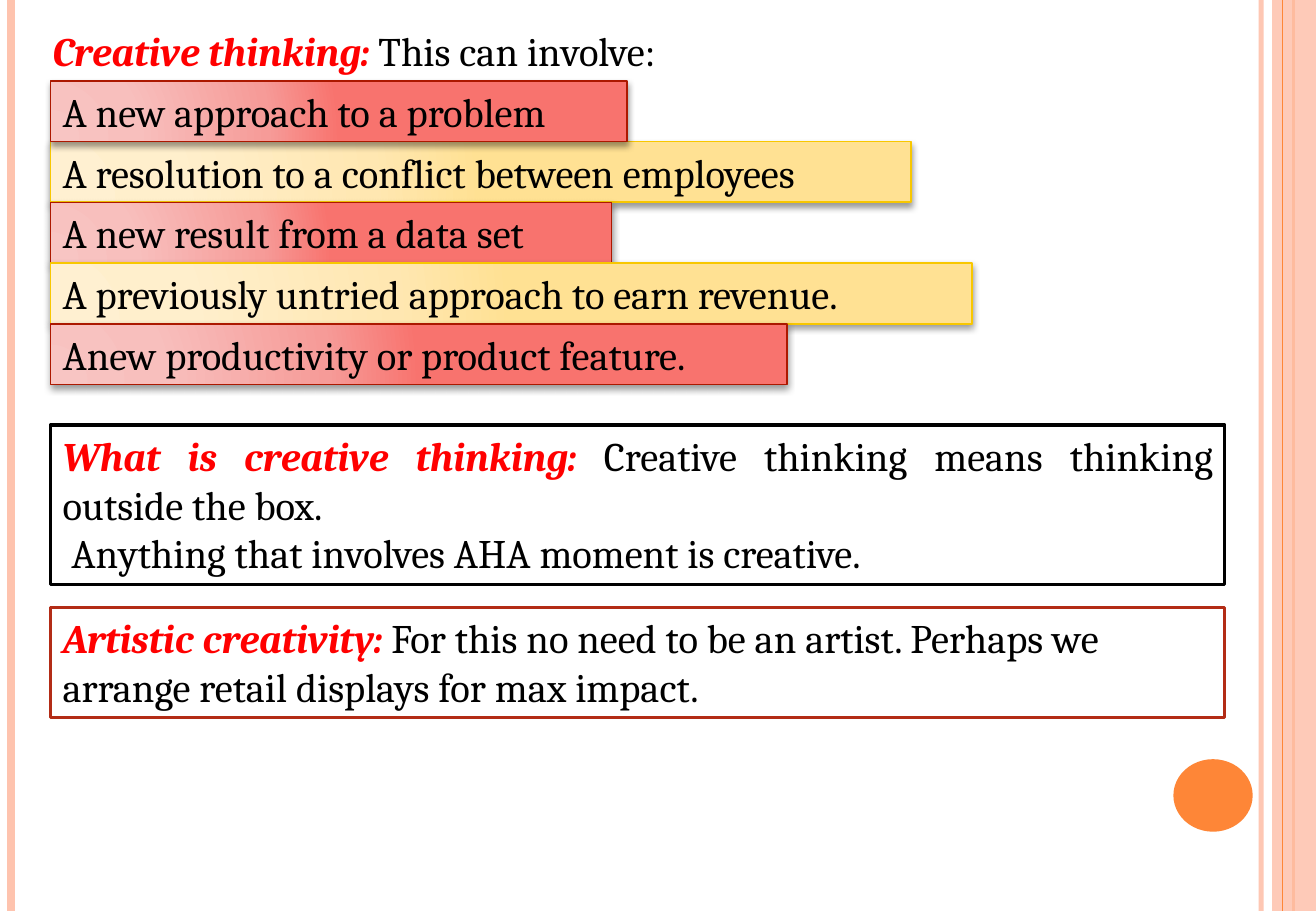
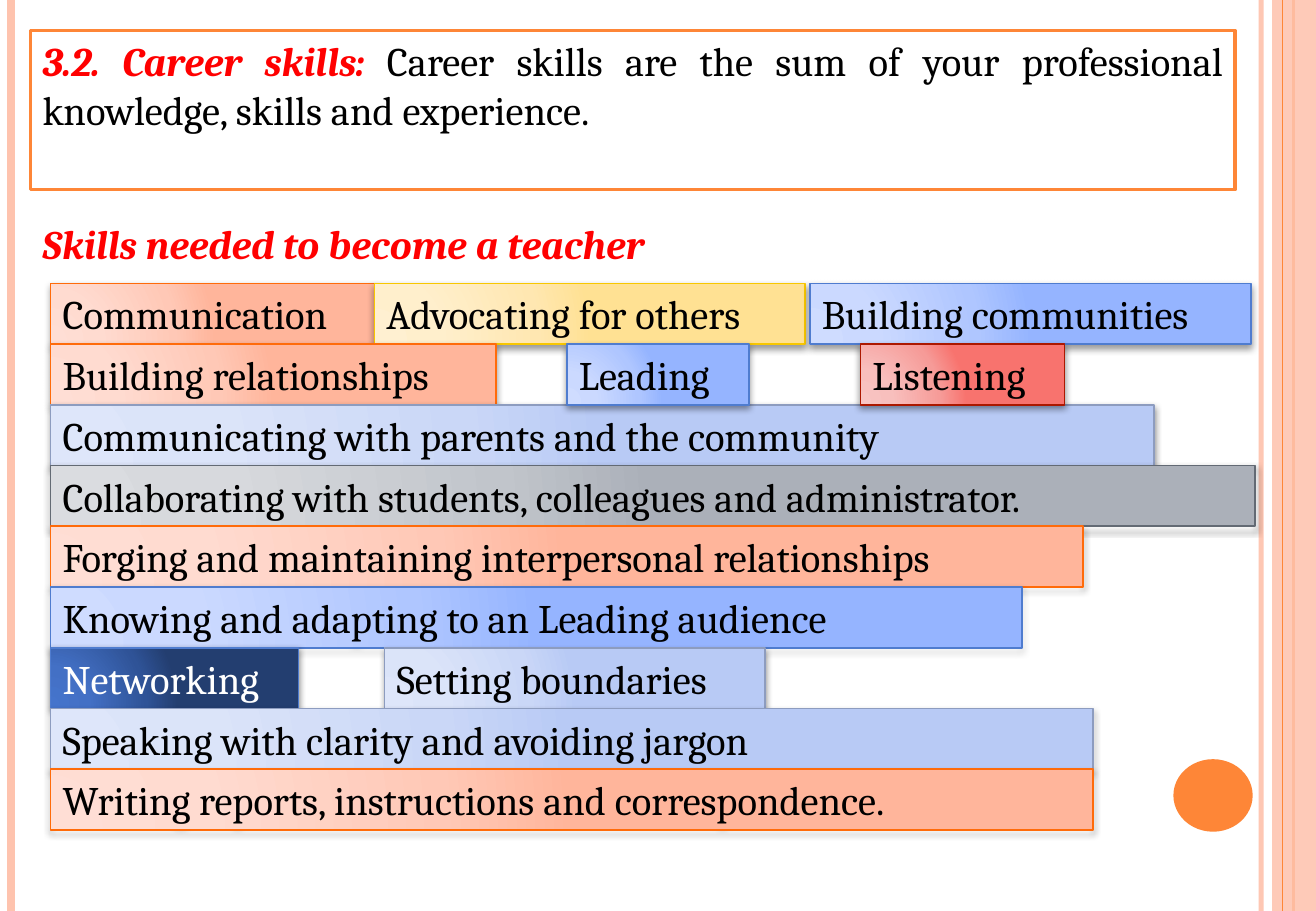
from dataclasses import dataclass

import pptx
import pptx.dml.color
import pptx.enum.shapes
import pptx.enum.text
import pptx.oxml
import pptx.oxml.ns
import pptx.util

Pt = pptx.util.Pt
RGB = pptx.dml.color.RGBColor
ALIGN = pptx.enum.text.PP_ALIGN
SHAPE = pptx.enum.shapes.MSO_SHAPE
qn = pptx.oxml.ns.qn
NS = pptx.oxml.ns.nsdecls("a")

FONT = "Cambria"
WIDTH, HEIGHT = 780, 540
MARGIN = 30
ROW_HEIGHT = 36

BLACK = RGB(0x00, 0x00, 0x00)
WHITE = RGB(0xFF, 0xFF, 0xFF)
RED = RGB(0xFF, 0x00, 0x00)
BRICK = RGB(0xB3, 0x2C, 0x16)
ORANGE = RGB(0xFE, 0x86, 0x37)
PEACH = RGB(0xFE, 0xC3, 0xAE)


@dataclass(frozen=True)
class BarStyle:
    stops: tuple[RGB, RGB, RGB, RGB]
    line: RGB
    text: RGB = BLACK
    shadow_alpha: int = 40
    shadow_distance: float = 2


@dataclass(frozen=True)
class Bar:
    row: int
    text: str
    width: float
    style: BarStyle
    left: float = MARGIN


@dataclass(frozen=True)
class Rule:
    x: float
    width: float
    color: RGB
    alpha: int = 100


def bar_style(line: str, *stops: str, **options) -> BarStyle:
    return BarStyle(tuple(map(RGB.from_string, stops)), RGB.from_string(line), **options)


CORAL = bar_style("AC1800", "F8C5C3", "F8BFBD", "F69B98", "F8736E")
YELLOW = bar_style("F8C700", "FFF0D1", "FFEFCC", "FFE7B1", "FFE193")
SALMON = bar_style("FF6B0A", "FFDED5", "FFDBD0", "FFC8B6", "FFB59B")
BLUE = bar_style("4F7CCF", "CFDCFF", "CBD9FF", "AFC6FF", "95B4FF")
PALE_BLUE = bar_style("8D9CBF", "DEE6FA", "DBE4F9", "CAD7F7", "B8CAF5")
GREY = bar_style("636A74", "DADCE0", "D7D9DD", "C1C5CB", "ABB0B9")
NAVY = bar_style("4F7CCF", "4574CC", "4370C5", "2F5397", "233E70",
                 text=WHITE, shadow_alpha=42, shadow_distance=1.6)

# Side rules, split by the band that lies between them
RULES_BELOW_BAND = (Rule(747.5, 3, PEACH, 93), Rule(6.5, 4.5, PEACH), Rule(766.75, 1.5, ORANGE))
RULES_ABOVE_BAND = (Rule(760.25, 0.75, ORANGE),)

# Listed from back to front
THINKING_BARS = (
    Bar(1, "A resolution to a conflict between employees", 510, YELLOW),
    Bar(2, "A new result from a data set", 332.5, CORAL),
    Bar(3, "A previously untried approach to earn revenue.", 546, YELLOW),
    Bar(4, "Anew productivity or product feature.", 436.5, CORAL),
    Bar(0, "A new approach to a problem", 341.5, CORAL),
)
SKILL_BARS = (
    Bar(0, "Communication", 193, SALMON),
    Bar(0, "Advocating for others", 255, YELLOW, left=222),
    Bar(0, "Building communities", 261.5, BLUE, left=480),
    Bar(1, "Building relationships", 264, SALMON),
    Bar(2, "Communicating with parents and the community", 654, PALE_BLUE),
    Bar(3, "Collaborating with students, colleagues and administrator.", 714, GREY),
    Bar(4, "Forging and maintaining interpersonal relationships", 612, SALMON),
    Bar(5, "Knowing and adapting to an Leading audience", 576, BLUE),
    Bar(1, "Leading", 108, BLUE, left=336),
    Bar(1, "Listening", 121, CORAL, left=510),
    Bar(6, "Networking", 147, NAVY),
    Bar(6, "Setting boundaries", 225.5, PALE_BLUE, left=228),
    Bar(7, "Speaking with clarity and avoiding jargon", 618, PALE_BLUE),
    Bar(8, "Writing reports, instructions and correspondence.", 618, SALMON),
)


def set_alpha(fill_parent, percent: int) -> None:
    color = fill_parent.find(qn("a:solidFill"))[0]
    color.append(pptx.oxml.parse_xml(f'<a:alpha {NS} val="{percent * 1000}"/>'))


def add_run(p, text: str, *, color: RGB = BLACK, size: float = 24,
            bold: bool = False, italic: bool = False) -> None:
    r = p.add_run()
    r.text = text
    r.font.name = FONT
    r.font.size = Pt(size)
    r.font.bold = bold
    r.font.italic = italic
    r.font.color.rgb = color


def write(sp, *paragraphs: tuple[str, str], align=ALIGN.LEFT, color: RGB = BLACK) -> None:
    """Write paragraphs, each a red lead-in followed by plain text."""
    tf = sp.text_frame
    tf.word_wrap = True
    tf.auto_size = pptx.enum.text.MSO_AUTO_SIZE.NONE
    tf.vertical_anchor = pptx.enum.text.MSO_ANCHOR.TOP
    for i, (lead, body) in enumerate(paragraphs):
        p = tf.add_paragraph() if i else tf.paragraphs[0]
        p.alignment = align
        if lead:
            add_run(p, lead, color=RED, bold=True, italic=True)
        if body:
            add_run(p, body, color=color)


def paint(sp, fill: RGB, line: RGB | None = None, line_width: float = 2) -> None:
    sp.shadow.inherit = False
    sp.fill.solid()
    sp.fill.fore_color.rgb = fill
    if line is None:
        sp.line.fill.background()
    else:
        sp.line.color.rgb = line
        sp.line.width = Pt(line_width)


def add_shape(slide, kind, left: float, top: float, width: float, height: float):
    return slide.shapes.add_shape(kind, Pt(left), Pt(top), Pt(width), Pt(height))


def add_rule(slide, rule: Rule) -> None:
    line = slide.shapes.add_connector(pptx.enum.shapes.MSO_CONNECTOR.STRAIGHT,
                                      Pt(rule.x), Pt(0), Pt(rule.x), Pt(HEIGHT))
    line.line.color.rgb = rule.color
    line.line.width = Pt(rule.width)
    spPr = line._element.spPr
    if rule.alpha < 100:
        set_alpha(spPr.find(qn("a:ln")), rule.alpha)
    spPr.append(pptx.oxml.parse_xml(f"<a:effectLst {NS}/>"))


def add_bar(slide, bar: Bar, top: float) -> None:
    style = bar.style
    sp = add_shape(slide, SHAPE.RECTANGLE, bar.left, top + bar.row * ROW_HEIGHT,
                   bar.width, ROW_HEIGHT)
    paint(sp, style.stops[-1], style.line, 1)
    spPr = sp._element.spPr
    # Radial gradient in place of the plain fill
    stops = "".join(f'<a:gs pos="{pos * 1000}"><a:srgbClr val="{color}"/></a:gs>'
                    for pos, color in zip((0, 30, 75, 100), style.stops))
    gradient = pptx.oxml.parse_xml(
        f'<a:gradFill {NS} rotWithShape="1"><a:gsLst>{stops}</a:gsLst><a:path path="circle">'
        '<a:fillToRect l="5000" t="100000" r="120000" b="10000"/></a:path></a:gradFill>')
    spPr.replace(spPr.find(qn("a:solidFill")), gradient)
    # Soft shadow straight below
    spPr.find(qn("a:effectLst")).append(pptx.oxml.parse_xml(
        f'<a:outerShdw {NS} blurRad="{Pt(4)}" dist="{Pt(style.shadow_distance)}" dir="5400000" '
        f'rotWithShape="0"><a:srgbClr val="{BLACK}">'
        f'<a:alpha val="{style.shadow_alpha * 1000}"/></a:srgbClr></a:outerShdw>'))
    write(sp, ("", bar.text), color=style.text)


def add_frame(slide, top: float, height: float, line: RGB, *paragraphs: tuple[str, str],
              align=ALIGN.LEFT) -> None:
    sp = add_shape(slide, SHAPE.RECTANGLE, MARGIN, top, 696, height)
    paint(sp, WHITE, line)
    write(sp, *paragraphs, align=align)


def place_title(slide, left: float, top: float, width: float, height: float,
                lead: str, body: str):
    title = slide.shapes.title
    title.left, title.top, title.width, title.height = map(Pt, (left, top, width, height))
    write(title, (lead, body), align=ALIGN.JUSTIFY)
    return title


def new_slide(prs):
    """Add a title-only slide with the side rules, band and disc."""
    slide = prs.slides.add_slide(prs.slide_layouts[5])
    for rule in RULES_BELOW_BAND:
        add_rule(slide, rule)
    band = add_shape(slide, SHAPE.RECTANGLE, 754, 0, WIDTH - 754, HEIGHT)
    paint(band, PEACH)
    set_alpha(band._element.spPr, 87)
    for rule in RULES_ABOVE_BAND:
        add_rule(slide, rule)
    paint(add_shape(slide, SHAPE.OVAL, 695.5, 450, 47, 43), ORANGE)
    return slide


def build_thinking(prs) -> None:
    slide = new_slide(prs)
    place_title(slide, 24, 12, 696, 36, "Creative thinking: ", "This can involve:")
    for bar in THINKING_BARS:
        add_bar(slide, bar, top=48)
    add_frame(slide, 252, 94.5, BLACK,
              ("What is creative thinking: ",
               "Creative thinking means thinking outside the box."),
              ("", " Anything that involves AHA moment is creative."),
              align=ALIGN.JUSTIFY)
    add_frame(slide, 360, 65.5, BRICK,
              ("Artistic creativity: ",
               "For this no need to be an artist. Perhaps we arrange retail displays "
               "for max impact."))


def build_skills(prs) -> None:
    slide = new_slide(prs)
    title = place_title(slide, 18, 18, 714, 94.5, "3.2. Career skills: ",
                        "Career skills are the sum of your professional knowledge, "
                        "skills and experience.")
    paint(title, WHITE, ORANGE)
    subhead = slide.shapes.add_textbox(Pt(18), Pt(126), Pt(431), Pt(36))
    write(subhead, ("Skills needed to become a teacher", ""))
    for bar in SKILL_BARS:
        add_bar(slide, bar, top=168)


def main() -> None:
    prs = pptx.Presentation()
    prs.slide_width, prs.slide_height = Pt(WIDTH), Pt(HEIGHT)
    build_thinking(prs)
    build_skills(prs)
    prs.save("out.pptx")


if __name__ == "__main__":
    main()
